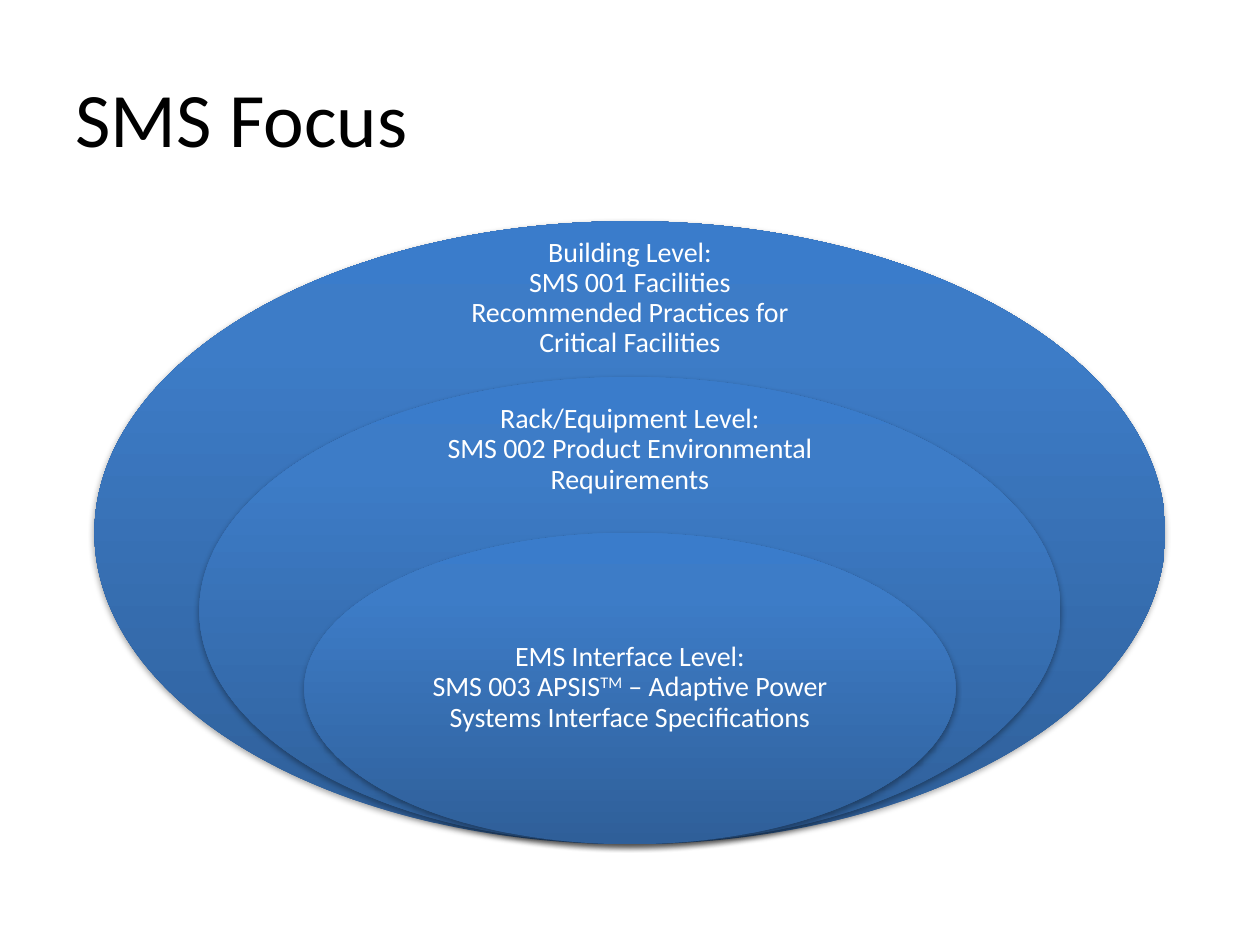
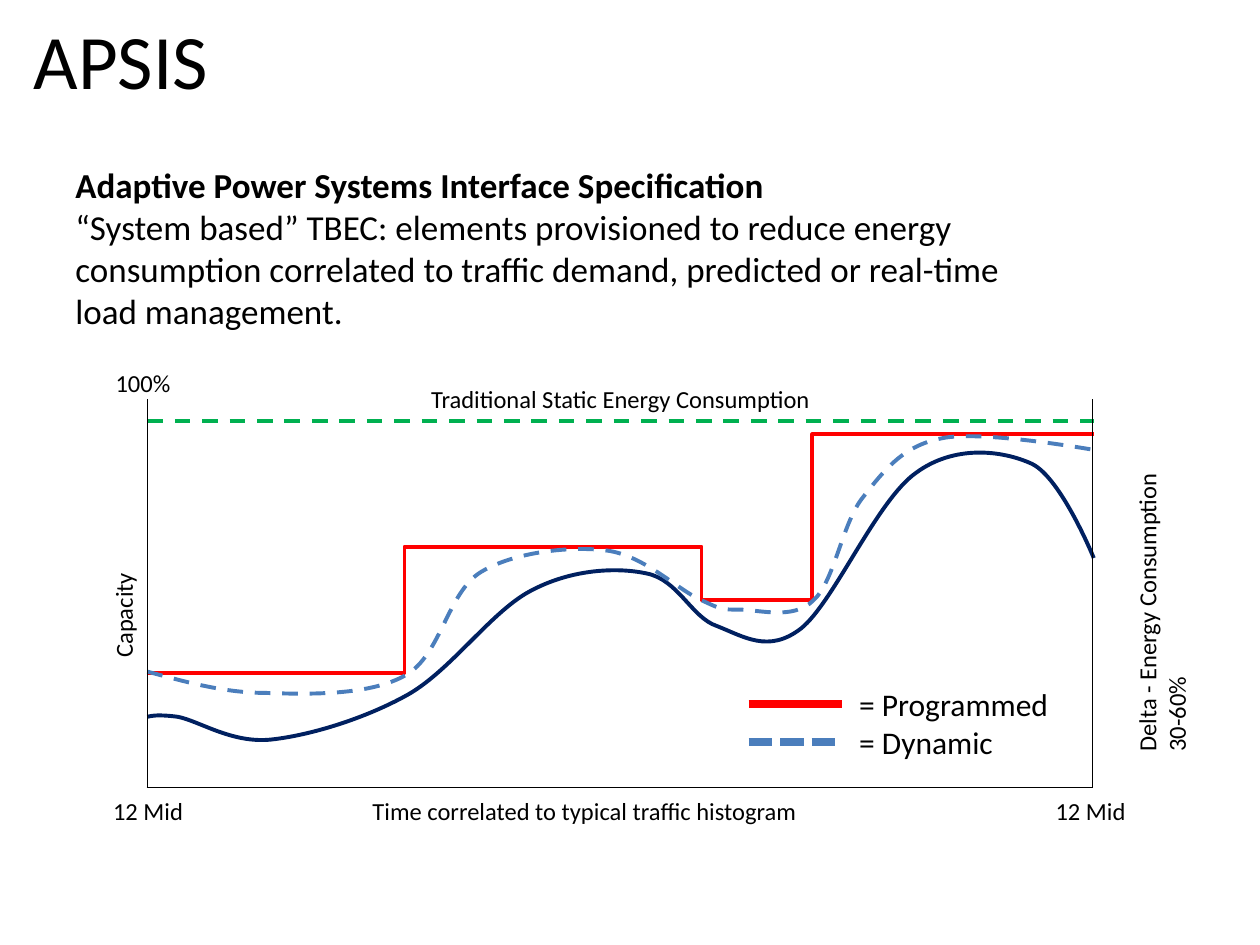
import copy

import pptx
import pptx.dml.color
import pptx.enum.dml
import pptx.enum.shapes
import pptx.enum.text
import pptx.oxml
import pptx.oxml.ns
import pptx.util
from lxml import etree

Cm = pptx.util.Cm
qn = pptx.oxml.ns.qn
Align = pptx.enum.text.PP_ALIGN
Anchor = pptx.enum.text.MSO_ANCHOR
Dash = pptx.enum.dml.MSO_LINE
Connector = pptx.enum.shapes.MSO_CONNECTOR

COLORS = {
    "text": "000000",
    "white": "FFFFFF",
    "load": "002060",
    "static": "00B050",
    "programmed": "FF0000",
    "dynamic": "4B7EBC",
    "deep": "2F5F99",
    "middle": "3D7CC7",
    "light": "3A7CCB",
}
FONT = "Calibri"

LEVELS = [
    (7.54, 5.08, 1.88, ["Building Level:\nSMS 001 Facilities Recommended Practices for Critical Facilities"]),
    (8.08, 8.18, 1.78, ["Rack/Equipment Level:\nSMS 002 Product Environmental Requirements"]),
    (9.27, 12.29, 3.15, [
        "EMS Interface Level:\nSMS 003 APSIS",
        ("TM", {"baseline": 30}),
        " – Adaptive Power Systems Interface Specifications",
    ]),
]

LOAD_CURVE = [
    (2.97, 14.45),
    (3.07, 14.43), (3.18, 14.4), (3.58, 14.45),
    (4.01, 14.53), (4.67, 14.99), (5.46, 14.91),
    (6.22, 14.83), (7.34, 14.5), (8.23, 14),
    (9.12, 13.49), (9.93, 12.29), (10.74, 11.89),
    (11.53, 11.48), (12.42, 11.43), (13.03, 11.56),
    (13.67, 11.68), (13.94, 12.45), (14.45, 12.62),
    (14.99, 12.83), (15.49, 13.18), (16.15, 12.67),
    (16.81, 12.14), (17.68, 10.08), (18.47, 9.53),
    (19.23, 8.97), (20.19, 9.07), (20.8, 9.35),
    (21.39, 9.63), (22.05, 11.25), (22.05, 11.25),
]
DYNAMIC_CURVE = [
    (2.97, 13.54),
    (3.73, 13.74), (4.5, 13.97), (5.38, 13.97),
    (6.25, 14), (7.47, 14.02), (8.18, 13.61),
    (8.89, 13.21), (9.02, 11.94), (9.7, 11.53),
    (10.36, 11.13), (11.51, 11), (12.24, 11.1),
    (12.98, 11.2), (13.67, 11.89), (14.12, 12.09),
    (14.55, 12.29), (14.53, 12.29), (14.91, 12.29),
    (15.29, 12.29), (15.98, 12.5), (16.38, 12.12),
    (16.81, 11.76), (16.97, 10.59), (17.37, 10.06),
    (17.81, 9.5), (18.19, 8.99), (18.97, 8.84),
    (19.74, 8.66), (22.05, 9.07), (22.05, 9.07),
]


def add_text(para, text, size=14, color="text", bold=False, baseline=0):
    for index, piece in enumerate(text.split("\n")):
        if index:
            para.add_line_break()
            para._p[-1].append(copy.deepcopy(span._r.get_or_add_rPr()))
        span = para.add_run()
        span.text = piece
        span.font.name = FONT
        span.font.size = pptx.util.Pt(size)
        span.font.bold = bold
        span.font.color.rgb = pptx.dml.color.RGBColor.from_string(COLORS[color])
        if baseline:
            span._r.get_or_add_rPr().set("baseline", str(baseline * 1000))


def make_xml(body):
    return pptx.oxml.parse_xml(body.replace(">", f" {pptx.oxml.ns.nsdecls('a')}>", 1))


class Page:
    def __init__(self, deck):
        self.slide = deck.slides.add_slide(deck.slide_layouts[6])
        self.shapes = self.slide.shapes

    def text(self, place, *paragraphs, align=Align.LEFT, anchor=Anchor.TOP, wrap=True,
             rotation=0, inset=None, spacing=None, **style):
        box = self.shapes.add_textbox(*map(Cm, place))
        box.rotation = rotation
        frame = box.text_frame
        frame.word_wrap = wrap
        frame.vertical_anchor = anchor
        if inset is not None:
            frame.margin_left = frame.margin_right = Cm(inset)
            frame.margin_top = frame.margin_bottom = Cm(inset)
        for index, spans in enumerate(paragraphs):
            para = frame.add_paragraph() if index else frame.paragraphs[0]
            para.alignment = align
            if spacing:
                para.line_spacing = spacing
            for item in [spans] if isinstance(spans, str) else spans:
                text, extra = (item, {}) if isinstance(item, str) else item
                add_text(para, text, **{**style, **extra})

    def title(self, left, top, text, anchor=Anchor.TOP):
        self.text((left, top, 22.86, 3.18), text, size=44, anchor=anchor)

    def ellipse(self, left, top, width, height):
        shape = self.shapes.add_shape(
            pptx.enum.shapes.MSO_SHAPE.OVAL, *map(Cm, (left, top, width, height)))
        shape.line.fill.background()
        stops = "".join(
            f'<a:gs pos="{position}000"><a:srgbClr val="{COLORS[name]}"/></a:gs>'
            for position, name in ((0, "deep"), (80, "middle"), (100, "light")))
        gradient = make_xml(
            f'<a:gradFill><a:gsLst>{stops}</a:gsLst><a:lin ang="16200000" scaled="0"/></a:gradFill>')
        shadow = make_xml(
            '<a:effectLst><a:outerShdw blurRad="40000" dist="23000" dir="5400000" rotWithShape="0">'
            '<a:srgbClr val="000000"><a:alpha val="35000"/></a:srgbClr></a:outerShdw></a:effectLst>')
        properties = shape._element.spPr
        properties.find(qn("a:prstGeom")).addnext(gradient)
        properties.append(shadow)

    def stroke(self, shape, color, width, dash):
        shape.line.color.rgb = pptx.dml.color.RGBColor.from_string(COLORS[color])
        shape.line.width = pptx.util.Pt(width)
        if dash:
            shape.line.dash_style = dash

    def line(self, start, end, color, width=2.25, dash=None, bend=None):
        kind = Connector.STRAIGHT if bend is None else Connector.ELBOW
        connector = self.shapes.add_connector(kind, *map(Cm, start + end))
        self.stroke(connector, color, width, dash)
        properties = connector._element.spPr
        etree.SubElement(properties, qn("a:effectLst"))
        if bend is not None:
            geometry = properties.find(qn("a:prstGeom"))
            guides = geometry.find(qn("a:avLst"))
            if guides is None:
                guides = etree.SubElement(geometry, qn("a:avLst"))
            etree.SubElement(guides, qn("a:gd"), name="adj1", fmla=f"val {round(bend * 100000)}")

    def curve(self, points, color, dash=None):
        start, *rest = [(Cm(x), Cm(y)) for x, y in points]
        builder = self.shapes.build_freeform(*start)
        builder.add_line_segments(rest, close=False)
        shape = builder.convert_to_shape()
        shape.shadow.inherit = False
        shape.fill.background()
        self.stroke(shape, color, 2.25, dash)
        segments = list(shape._element.iter(qn("a:lnTo")))
        outline = segments[0].getparent()
        for first in range(0, len(segments), 3):
            bezier = etree.SubElement(outline, qn("a:cubicBezTo"))
            for segment in segments[first:first + 3]:
                bezier.append(segment[0])
                outline.remove(segment)

    def frame(self, left, top, width, height):
        table = self.shapes.add_table(1, 1, *map(Cm, (left, top, width, height))).table
        table.first_row = table.horz_banding = False
        cell = table.cell(0, 0)
        properties = cell._tc.get_or_add_tcPr()
        for side in "LRTB":
            border = etree.SubElement(properties, qn(f"a:ln{side}"), w=str(pptx.util.Pt(1)))
            if side == "T":
                etree.SubElement(border, qn("a:noFill"))
            else:
                fill = etree.SubElement(border, qn("a:solidFill"))
                etree.SubElement(fill, qn("a:srgbClr"), val=COLORS["text"])
        cell.fill.background()


def build_focus(deck):
    page = Page(deck)
    page.title(1.27, 0.76, "SMS Focus", anchor=Anchor.MIDDLE)
    center, bottom = 12.7, 17.02
    for index, (text_width, text_top, text_height, spans) in enumerate(LEVELS):
        width, height = 21.59 - 4.23 * index, 12.56 - 3.14 * index
        page.ellipse(center - width / 2, bottom - height, width, height)
        page.text((center - text_width / 2, text_top, text_width, text_height), spans,
                  align=Align.CENTER, anchor=Anchor.MIDDLE, inset=0.3, spacing=0.9,
                  size=16, color="white")


def build_apsis(deck):
    page = Page(deck)
    left, right = 2.97, 22.05
    page.text((1.27, 3.18, 20.12, 3.61), [
        ("Adaptive Power Systems Interface Specification\n", {"bold": True}),
        "“System based” TBEC: elements provisioned to reduce energy consumption "
        "correlated to traffic demand, predicted or real-time load management.",
    ], size=20)

    page.curve(LOAD_CURVE, "load")
    page.line((left, 8.48), (right, 8.48), "static", dash=Dash.DASH)
    for start, end, bend in [
        ((left, 13.56), (13.34, 11.02), 0.5),
        ((13.34, 11.02), (16.38, 12.09), 0.264),
        ((16.31, 12.09), (right, 8.76), 0.011),
    ]:
        page.line(start, end, "programmed", bend=bend)

    for x, y, width, label, rotation in [
        (2.08, 7.29, 1.78, "100%", 0),
        (2.03, 15.93, 2.01, "12 Mid", 0),
        (21.03, 15.93, 2.01, "12 Mid", 0),
        (7.26, 15.93, 9.7, "Time correlated to typical traffic histogram", 0),
        (1.27, 11.86, 2.44, "Capacity", 270),
    ]:
        page.text((x, y, width, 0.86), label, wrap=False, rotation=rotation)
    page.text((20.27, 11.53, 6.3, 1.45), "Delta - Energy Consumption 30-60%", rotation=270)
    page.text((left, 7.62, right - left, 0.86), "Traditional Static Energy Consumption",
              align=Align.CENTER)

    page.curve(DYNAMIC_CURVE, "dynamic", dash=Dash.DASH)
    page.text((17.07, 13.69, 4.78, 1.8), "= Programmed", "= Dynamic", wrap=False, size=18)
    for y, color, dash in [(14.2, "programmed", None), (14.96, "dynamic", Dash.SQUARE_DOT)]:
        page.line((15.09, y), (16.97, y), color, width=4.5, dash=dash)
    page.frame(left, 8.05, 19.05, 7.82)
    page.title(0.43, 0.13, "APSIS")


def main():
    deck = pptx.Presentation()
    deck.slide_width, deck.slide_height = Cm(25.4), Cm(19.05)
    build_focus(deck)
    build_apsis(deck)
    deck.save("out.pptx")


if __name__ == "__main__":
    main()
